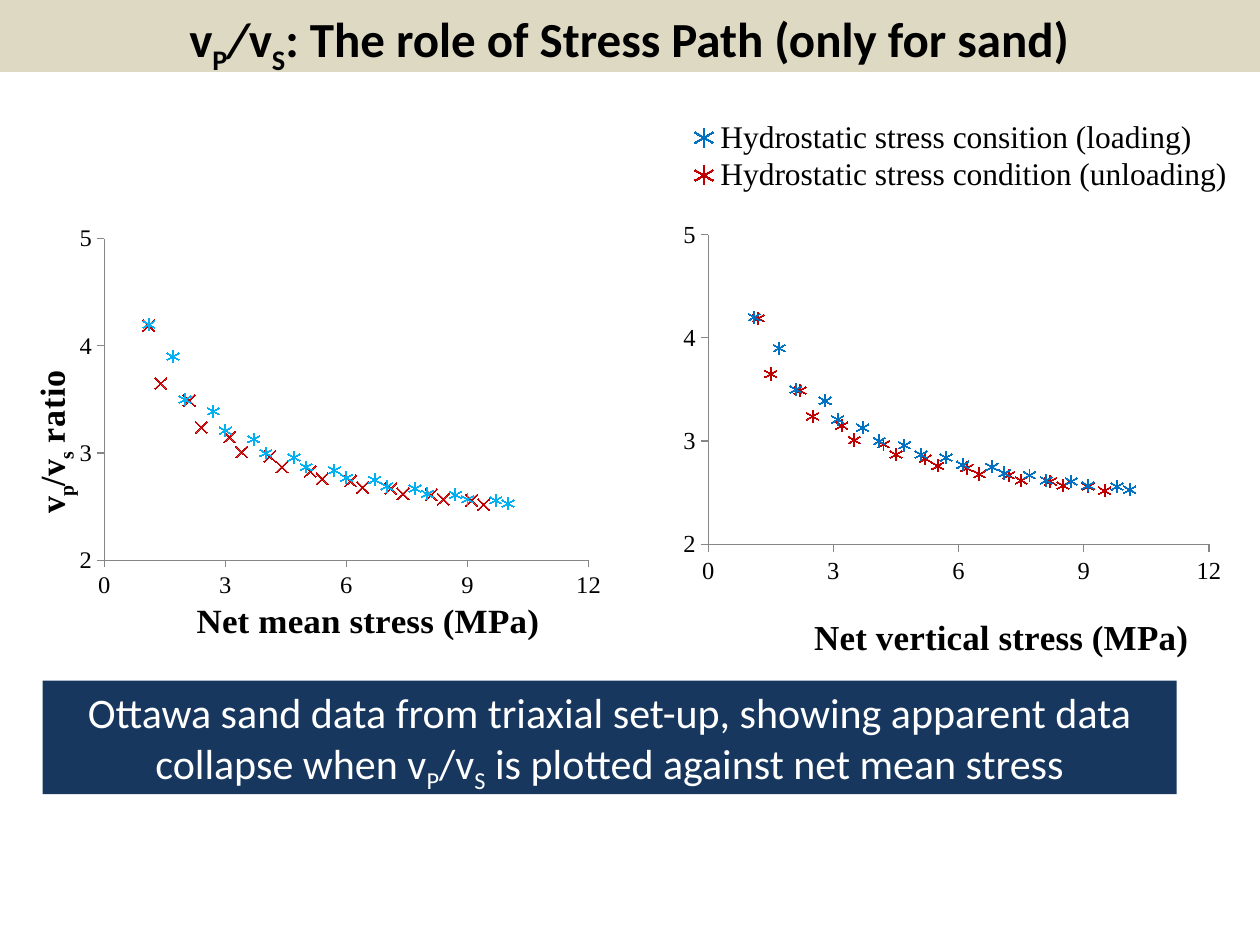
from lxml.etree import SubElement
from pptx import Presentation
from pptx.chart.data import XyChartData
from pptx.dml.color import RGBColor
from pptx.enum.chart import XL_CHART_TYPE, XL_LEGEND_POSITION, XL_MARKER_STYLE, XL_TICK_MARK
from pptx.enum.shapes import MSO_SHAPE
from pptx.enum.text import MSO_ANCHOR, MSO_AUTO_SIZE, PP_ALIGN
from pptx.oxml.ns import qn
from pptx.util import Cm, Pt

BLACK = RGBColor(0, 0, 0)
WHITE = RGBColor(255, 255, 255)
SAND = RGBColor(0xDD, 0xD9, 0xC3)
NAVY = RGBColor(0x17, 0x37, 0x5E)
GREY = RGBColor(0x86, 0x86, 0x86)
SKY = RGBColor(0x00, 0xB0, 0xF0)
BLUE = RGBColor(0x00, 0x70, 0xC0)
RED = RGBColor(0xC0, 0x00, 0x00)

TITLE_FONT = {"name": "Calibri", "size": Pt(28), "bold": True}
NOTE_FONT = {"name": "Calibri", "size": Pt(24), "bold": False}
TICK_FONT = {"name": "Times New Roman", "size": Pt(14), "bold": False}
AXIS_FONT = {"name": "Times New Roman", "size": Pt(20), "bold": True}
LEGEND_FONT = {"name": "Times New Roman", "size": Pt(18), "bold": False}

LOADING_RATIO = [4.2, 3.9, 3.5, 3.39, 3.21, 3.13, 3, 2.96, 2.87, 2.84,
                 2.77, 2.75, 2.69, 2.67, 2.62, 2.61, 2.57, 2.56, 2.53]
UNLOADING_RATIO = [2.52, 2.56, 2.57, 2.61, 2.62, 2.67, 2.68, 2.74, 2.76,
                   2.83, 2.87, 2.97, 3.01, 3.15, 3.24, 3.49, 3.65, 4.19]
MEAN_LOADING = [1.1, 1.7, 2, 2.7, 3, 3.7, 4, 4.7, 5, 5.7,
                6, 6.7, 7, 7.7, 8, 8.7, 9, 9.7, 10]
MEAN_UNLOADING = [9.4, 9.1, 8.4, 8.1, 7.4, 7.1, 6.4, 6.1, 5.4,
                  5.1, 4.4, 4.1, 3.4, 3.1, 2.4, 2.1, 1.4, 1.1]
VERTICAL_LOADING = [1.1, 1.7, 2.1, 2.8, 3.1, 3.7, 4.1, 4.7, 5.1, 5.7,
                    6.1, 6.8, 7.1, 7.7, 8.1, 8.7, 9.1, 9.8, 10.1]
VERTICAL_UNLOADING = [9.5, 9.1, 8.5, 8.2, 7.5, 7.2, 6.5, 6.2, 5.5,
                      5.2, 4.5, 4.2, 3.5, 3.2, 2.5, 2.2, 1.5, 1.2]


def set_all(target, values):
    """Set every attribute named in a dict."""
    for name, value in values.items():
        setattr(target, name, value)


def style_font(font, values, color):
    """Apply font values and a colour."""
    set_all(font, values)
    font.color.rgb = color


def add_spans(para, spans, values, color):
    """Write runs given as (text, kind), kind being '', 'sub' or 'italic'."""
    for text, kind in spans:
        span = para.add_run()
        span.text = text
        style_font(span.font, values, color)
        if kind == "italic":
            span.font.italic = True
        if kind == "sub":
            span.font._element.set("baseline", "-25000")


def fill_placeholder(box, place, spans, values, color):
    """Move a placeholder and write one centred, unbulleted paragraph."""
    set_all(box, dict(zip(("left", "top", "width", "height"), map(Cm, place))))
    set_all(box.text_frame, {"word_wrap": True, "auto_size": MSO_AUTO_SIZE.NONE,
                             "vertical_anchor": MSO_ANCHOR.TOP})
    para = box.text_frame.paragraphs[0]
    set_all(para, {"alignment": PP_ALIGN.CENTER, "space_before": Pt(0)})
    properties = para._p.get_or_add_pPr()
    properties.set("marL", "0")
    properties.set("indent", "0")
    SubElement(properties, qn("a:buNone"))
    add_spans(para, spans, values, color)


def add_band(page):
    """Put the sand-coloured band behind the title."""
    band = page.shapes.add_shape(MSO_SHAPE.RECTANGLE, 0, 0, Cm(25.4), Cm(1.45))
    band.shadow.inherit = False
    band.fill.solid()
    band.fill.fore_color.rgb = SAND
    band.line.fill.background()
    page.shapes.title.element.addprevious(band.element)


def place_part(part, index, fractions, inner=False):
    """Give a chart part a manual layout in fractions of the chart."""
    old = part.find(qn("c:layout"))
    if old is not None:
        part.remove(old)
    layout = part.makeelement(qn("c:layout"))
    part.insert(index, layout)
    manual = SubElement(layout, qn("c:manualLayout"))
    if inner:
        SubElement(manual, qn("c:layoutTarget")).set("val", "inner")
    for name in ("xMode", "yMode"):
        SubElement(manual, qn(f"c:{name}")).set("val", "edge")
    for name, value in zip("xywh", fractions):
        SubElement(manual, qn(f"c:{name}")).set("val", str(value))


def style_axis(axis, low, high, step):
    """Set the scale, ticks, line and labels of an axis."""
    set_all(axis, {"minimum_scale": low, "maximum_scale": high, "major_unit": step,
                   "has_major_gridlines": False, "major_tick_mark": XL_TICK_MARK.OUTSIDE,
                   "minor_tick_mark": XL_TICK_MARK.NONE})
    axis.format.line.color.rgb = GREY
    axis.format.line.width = Pt(0.75)
    style_font(axis.tick_labels.font, TICK_FONT, BLACK)


def title_axis(axis, spans, corner, turned=False):
    """Write an axis title at a given corner of the chart."""
    title = axis.axis_title
    add_spans(title.text_frame.paragraphs[0], spans, AXIS_FONT, BLACK)
    if turned:
        body = title.element.find(".//" + qn("a:bodyPr"))
        body.set("rot", "-5400000")
        body.set("vert", "horz")
    place_part(title.element, 1, corner)


def add_scatter(page, place, plot, groups):
    """Add a scatter chart of (name, stresses, ratios, marker, colour) groups."""
    data = XyChartData()
    for name, stresses, ratios, _, _ in groups:
        series = data.add_series(name)
        for stress, ratio in zip(stresses, ratios):
            series.add_data_point(stress, ratio)
    chart = page.shapes.add_chart(XL_CHART_TYPE.XY_SCATTER, *map(Cm, place), data).chart
    set_all(chart, {"has_title": False, "has_legend": False})
    style_font(chart.font, TICK_FONT, BLACK)
    chart.plots[0].vary_by_categories = False
    for series, (_, _, _, marker, color) in zip(chart.plots[0].series, groups):
        series.smooth = False
        series.format.line.fill.background()
        set_all(series.marker, {"style": marker, "size": 7})
        series.marker.format.fill.solid()
        series.marker.format.fill.fore_color.rgb = color
        series.marker.format.line.color.rgb = color
    style_axis(chart.category_axis, 0, 12, 3)
    style_axis(chart.value_axis, 2, 5, 1)
    place_part(chart.element.find(".//" + qn("c:plotArea")), 0, plot, inner=True)
    return chart


def add_legend(chart, fractions):
    """Add a legend at a set place in the chart."""
    chart.has_legend = True
    set_all(chart.legend, {"position": XL_LEGEND_POSITION.RIGHT, "include_in_layout": False})
    style_font(chart.legend.font, LEGEND_FONT, BLACK)
    place_part(chart.element.find(".//" + qn("c:legend")), 1, fractions)


def main():
    """Build and save the deck."""
    deck = Presentation()
    set_all(deck, {"slide_width": Cm(25.4), "slide_height": Cm(19.05)})
    page = deck.slides.add_slide(deck.slide_layouts[1])
    add_band(page)
    fill_placeholder(page.shapes.title, (0.03, 0.05, 25.3, 1.45),
                     [("v", ""), ("P", "sub"), ("/", "italic"), ("v", ""), ("S", "sub"),
                      (": The role of Stress Path (only for sand)", "")], TITLE_FONT, BLACK)
    note = page.placeholders[1]
    note.fill.solid()
    note.fill.fore_color.rgb = NAVY
    fill_placeholder(note, (0.86, 13.72, 22.86, 2.29),
                     [("Ottawa sand data from triaxial set-up, showing apparent data "
                       "collapse when v", ""), ("P", "sub"), ("/v", ""), ("S", "sub"),
                      (" is plotted against net mean stress", "")], NOTE_FONT, WHITE)

    star, cross = XL_MARKER_STYLE.STAR, XL_MARKER_STYLE.X
    mean = add_scatter(page, (0.3, 4.52, 12.19, 8.61), (0.148, 0.035, 0.801, 0.777), [
        ("Series 1", MEAN_LOADING, LOADING_RATIO, star, SKY),
        ("Series 2", MEAN_UNLOADING, UNLOADING_RATIO, cross, RED)])
    title_axis(mean.category_axis, [("Net mean stress (MPa)", "")], (0.29, 0.89))
    title_axis(mean.value_axis, [("v", ""), ("p", "sub"), ("/v", ""), ("s", "sub"),
                                 (" ratio", "")], (0.02, 0.35), turned=True)

    vertical = add_scatter(page, (12.9, 2.13, 12.09, 11.4), (0.114, 0.228, 0.835, 0.548), [
        ("Hydrostatic stress consition (loading)", VERTICAL_LOADING, LOADING_RATIO, star, BLUE),
        ("Hydrostatic stress condition (unloading)", VERTICAL_UNLOADING, UNLOADING_RATIO,
         star, RED)])
    title_axis(vertical.category_axis, [("Net vertical stress (MPa)", "")], (0.28, 0.89))
    add_legend(vertical, (0.08, 0.02, 0.91, 0.14))
    deck.save("out.pptx")


if __name__ == "__main__":
    main()
